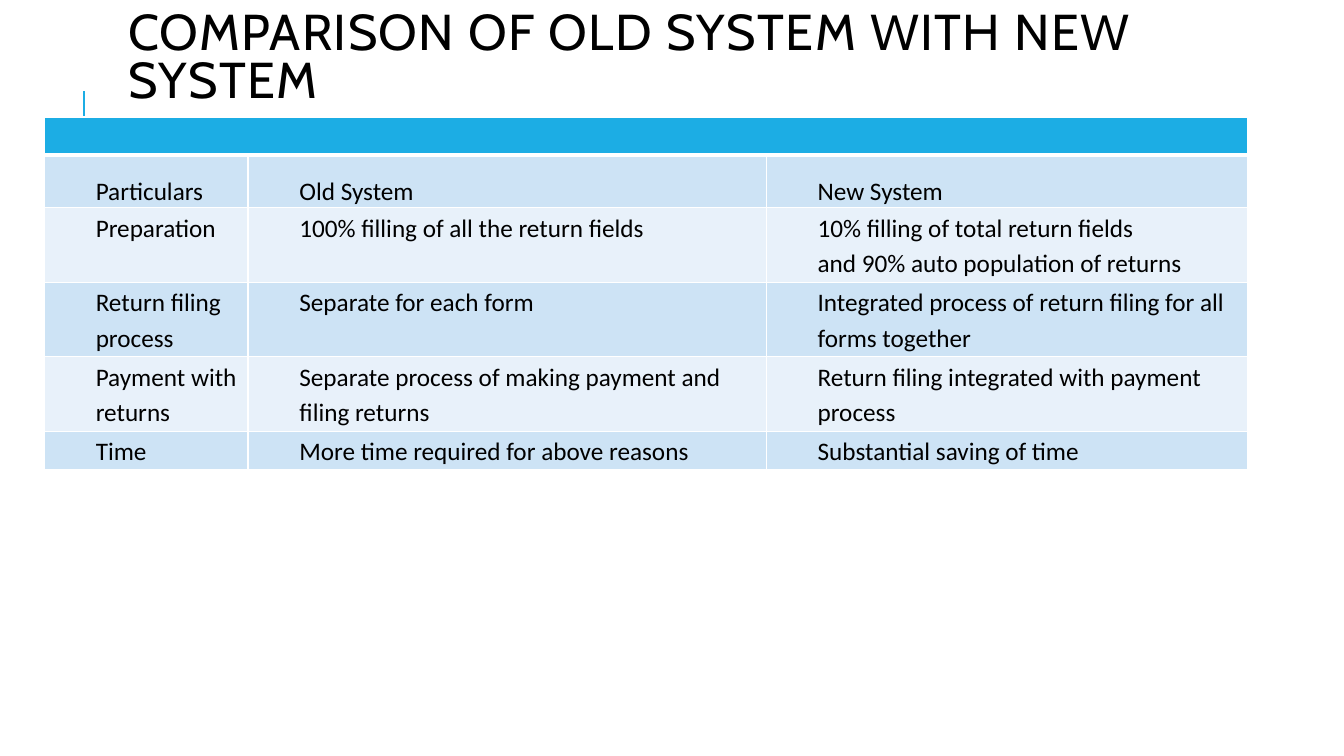
"""Build the slide that compares the old return filing system with the new one."""
from lxml import etree
from pptx import Presentation
from pptx.dml.color import RGBColor
from pptx.enum.shapes import MSO_CONNECTOR
from pptx.enum.text import MSO_ANCHOR, MSO_AUTO_SIZE, PP_ALIGN
from pptx.oxml.ns import qn
from pptx.util import Inches, Pt

STRAIGHT = MSO_CONNECTOR.STRAIGHT
TOP, MIDDLE, BOTTOM = MSO_ANCHOR.TOP, MSO_ANCHOR.MIDDLE, MSO_ANCHOR.BOTTOM
NO_AUTOFIT = MSO_AUTO_SIZE.NONE
LEFT = PP_ALIGN.LEFT

TITLE = "COMPARISON OF OLD SYSTEM WITH NEW SYSTEM"
ROWS = [
    ("Particulars", "Old System", "New System"),
    ("Preparation", "100% filling of all the return fields",
     "10% filling of total return fields\vand 90% auto population of returns"),
    ("Return filing process", "Separate for each form",
     "Integrated process of return filing for all forms together"),
    ("Payment with returns", "Separate process of making payment and filing returns",
     "Return filing integrated with payment process"),
    ("Time", "More time required for above reasons", "Substantial saving of time"),
]
COLUMN_WIDTHS = (2.02, 5.14, 4.77)
ROW_HEIGHTS = (0.38, 0.52, 0.74, 0.74, 0.74, 0.38)

THEME = {
    "accent": "1CADE4", "bands": ("CDE3F5", "E8F1FA"), "border": "FFFFFF", "text": "000000",
    "title_font": "Cabin", "body_font": "Calibri", "title_size": 36, "body_size": 18,
}


def write_text(frame, text, font, size, line_spacing, indent=0, tracking=0):
    paragraph = frame.paragraphs[0]
    paragraph.text = text
    paragraph.alignment = LEFT
    paragraph.line_spacing = line_spacing
    properties = paragraph._p.get_or_add_pPr()
    properties.set("marL", str(Inches(indent)))
    properties.set("indent", "0")
    for run in paragraph.runs:
        run.font.name = font
        run.font.size = Pt(size)
        run.font.color.rgb = RGBColor.from_string(THEME["text"])
        run._r.get_or_add_rPr().set("spc", str(tracking * 100))


def style_cell(cell, fill, top=1, bottom=1):
    properties = cell._tc.get_or_add_tcPr()
    for side, width in (("L", 1), ("R", 1), ("T", top), ("B", bottom)):
        border = etree.SubElement(properties, qn(f"a:ln{side}"), w=str(Pt(width)))
        solid = etree.SubElement(border, qn("a:solidFill"))
        etree.SubElement(solid, qn("a:srgbClr"), val=THEME["border"])
    cell.fill.solid()
    cell.fill.fore_color.rgb = RGBColor.from_string(fill)
    cell.margin_left = cell.margin_right = cell.margin_top = Inches(0.01)
    cell.margin_bottom = 0


def add_title(slide):
    title = slide.shapes.title
    title.left, title.top = Inches(1.17), Inches(0.22)
    title.width, title.height = Inches(10.63), Inches(0.75)
    frame = title.text_frame
    frame.word_wrap = True
    frame.auto_size = NO_AUTOFIT
    frame.vertical_anchor = MIDDLE
    write_text(frame, TITLE, THEME["title_font"], THEME["title_size"], 0.8, tracking=1)


def add_accent_line(slide):
    line = slide.shapes.add_connector(
        STRAIGHT, Inches(0.83), Inches(1.9), Inches(0.83), Inches(0.9))
    line.line.color.rgb = RGBColor.from_string(THEME["accent"])
    line.line.width = Pt(1.5)
    etree.SubElement(line._element.spPr, qn("a:effectLst"))


def add_comparison_table(slide):
    table = slide.shapes.add_table(
        len(ROW_HEIGHTS), len(COLUMN_WIDTHS), Inches(0.44), Inches(1.16),
        Inches(sum(COLUMN_WIDTHS)), Inches(sum(ROW_HEIGHTS))).table
    for column, width in zip(table.columns, COLUMN_WIDTHS):
        column.width = Inches(width)
    for row, height in zip(table.rows, ROW_HEIGHTS):
        row.height = Inches(height)

    table.cell(0, 0).merge(table.cell(0, len(COLUMN_WIDTHS) - 1))
    for cell in table.rows[0].cells:
        style_cell(cell, THEME["accent"], bottom=3)
    for index, texts in enumerate(ROWS):
        for cell, text in zip(table.rows[index + 1].cells, texts):
            style_cell(cell, THEME["bands"][index % 2], top=1 if index else 3)
            cell.vertical_anchor = TOP if index else BOTTOM
            write_text(cell.text_frame, text, THEME["body_font"], THEME["body_size"],
                       1.15, indent=0.5)


def main():
    presentation = Presentation()
    presentation.slide_width, presentation.slide_height = Inches(13.33), Inches(7.5)
    slide = presentation.slides.add_slide(presentation.slide_layouts.get_by_name("Title Only"))
    add_accent_line(slide)
    add_title(slide)
    add_comparison_table(slide)
    presentation.save("out.pptx")


if __name__ == "__main__":
    main()
